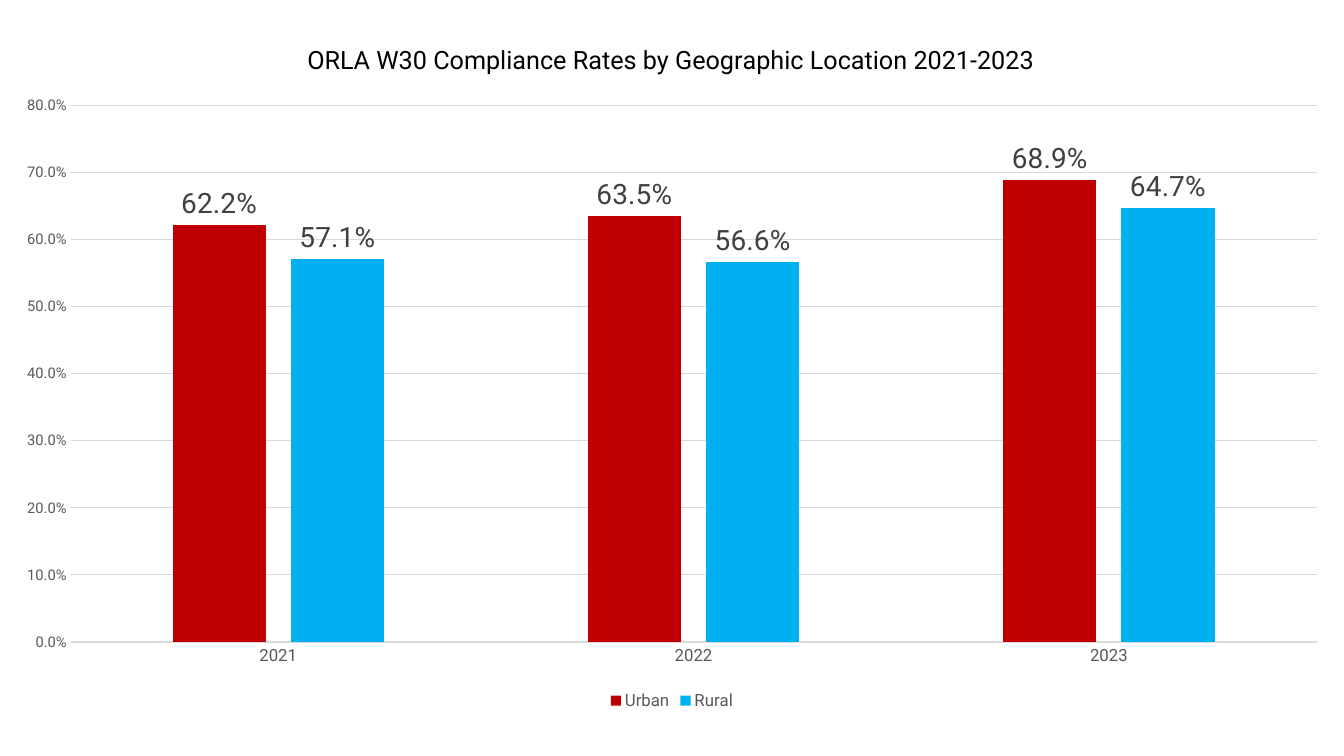
"""Build a slide with a column chart of compliance rates by location."""
import pptx
import pptx.chart.data
import pptx.dml.color
import pptx.enum.chart
import pptx.oxml
import pptx.oxml.ns
import pptx.util

Cm, Pt = pptx.util.Cm, pptx.util.Pt
enums = pptx.enum.chart

TITLE = "ORLA W30 Compliance Rates by Geographic Location 2021-2023"
YEARS = ["2021", "2022", "2023"]
RATES = {"Urban": (0.622, 0.635, 0.689), "Rural": (0.571, 0.566, 0.647)}
HUES = {"Urban": "C00000", "Rural": "00B0F0", "title": "000000",
        "axis": "595959", "label": "404040", "grid": "D9D9D9"}
FONT, FORM = "Roboto", "0.0%"
WIDE, TALL = 33.87, 17.53
PLACES = {"c:title": {"x": 7.63, "y": 0.5},
          "c:plotArea": {"x": 1.78, "y": 2.17, "w": 31.4, "h": 13.53}}


def color(key):
    return pptx.dml.color.RGBColor.from_string(HUES[key])


def apply(item, **values):
    for name, value in values.items():
        setattr(item, name, value)


def style(font, size, key):
    apply(font, name=FONT, size=Pt(size), bold=False)
    font.color.rgb = color(key)


def rule(line):
    line.color.rgb = color("grid")
    line.width = Pt(0.75)


def place(chart, tag, spots):
    """Fix a chart part at a distance in cm from the chart's corner."""
    part = chart.element.xpath(f"c:chart/{tag}")[0]
    old = part.find(pptx.oxml.ns.qn("c:layout"))
    index = 0
    if old is not None:
        index = part.index(old)
        part.remove(old)
    target = '<c:layoutTarget val="inner"/>' if "w" in spots else ""
    modes = "".join(f'<c:{k}Mode val="edge"/>' for k in "xy")
    sizes = "".join(f'<c:{k} val="{v / (WIDE if k in "xw" else TALL)}"/>'
                    for k, v in spots.items())
    part.insert(index, pptx.oxml.parse_xml(
        f'<c:layout {pptx.oxml.ns.nsdecls("c")}><c:manualLayout>'
        f'{target}{modes}{sizes}</c:manualLayout></c:layout>'))


def main():
    deck = pptx.Presentation()
    apply(deck, slide_width=Cm(WIDE), slide_height=Cm(19.05))
    slide = deck.slides.add_slide(deck.slide_layouts[6])

    data = pptx.chart.data.CategoryChartData(number_format=FORM)
    data.categories = YEARS
    for name, rates in RATES.items():
        data.add_series(name, rates)
    chart = slide.shapes.add_chart(
        enums.XL_CHART_TYPE.COLUMN_CLUSTERED, Cm(0), Cm(0.48),
        Cm(WIDE), Cm(TALL), data).chart
    style(chart.font, 10, "title")

    frame = chart.chart_title.text_frame
    frame.text = TITLE
    style(frame.paragraphs[0].runs[0].font, 18, "title")

    chart.has_legend = True
    apply(chart.legend, include_in_layout=False,
          position=enums.XL_LEGEND_POSITION.BOTTOM)
    style(chart.legend.font, 12, "axis")

    years, scale = chart.category_axis, chart.value_axis
    for axis, size in ((years, 12), (scale, 10.5)):
        apply(axis, major_tick_mark=enums.XL_TICK_MARK.NONE,
              minor_tick_mark=enums.XL_TICK_MARK.NONE)
        style(axis.tick_labels.font, size, "axis")
    rule(years.format.line)
    apply(scale, minimum_scale=0, maximum_scale=0.8, major_unit=0.1)
    apply(scale.tick_labels, number_format=FORM, number_format_is_linked=False)
    scale.format.line.fill.background()
    rule(scale.major_gridlines.format.line)

    plot = chart.plots[0]
    apply(plot, gap_width=219, overlap=-27, vary_by_categories=False)
    for bars in plot.series:
        bars.format.fill.solid()
        bars.format.fill.fore_color.rgb = color(bars.name)
        apply(bars.data_labels, show_value=True, number_format=FORM,
              number_format_is_linked=False,
              position=enums.XL_LABEL_POSITION.OUTSIDE_END)
        style(bars.data_labels.font, 20, "label")

    for tag, spots in PLACES.items():
        place(chart, tag, spots)
    deck.save("out.pptx")


if __name__ == "__main__":
    main()
